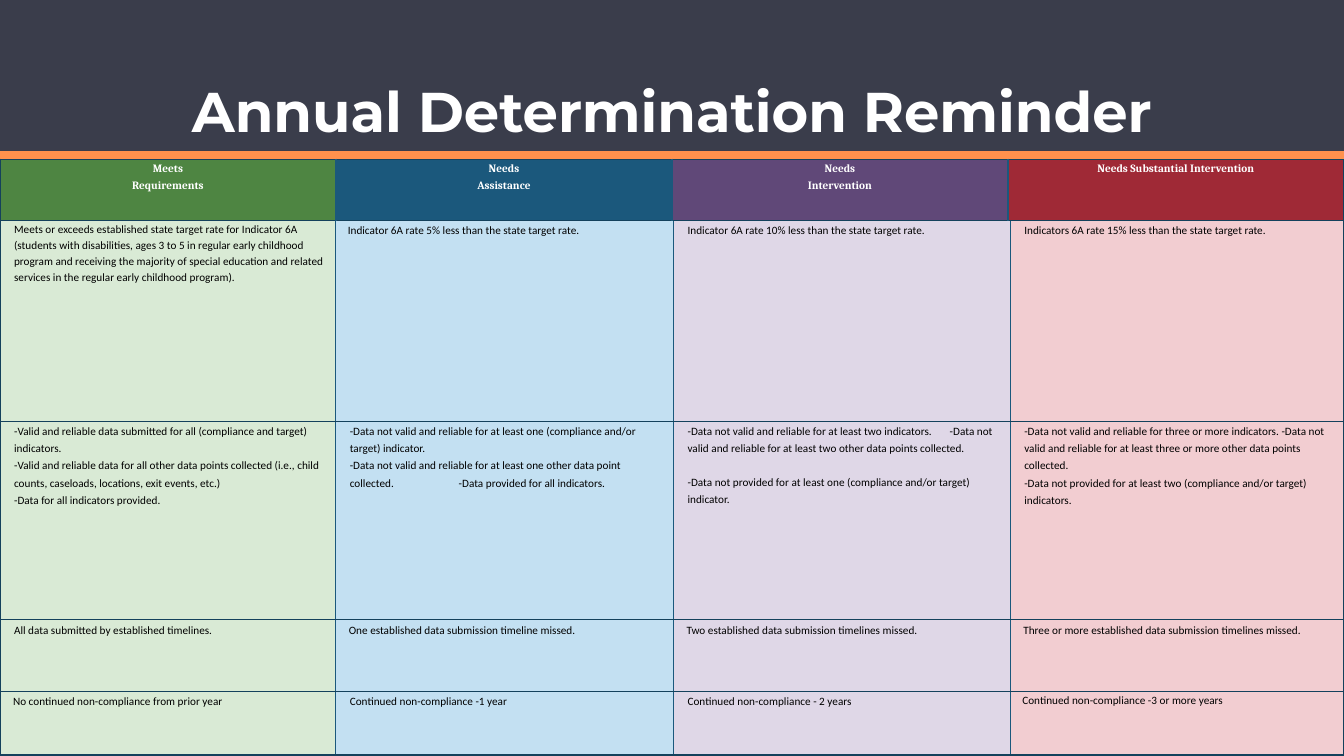
import pptx
import pptx.dml.color
import pptx.enum.shapes
import pptx.enum.text
import pptx.oxml.ns
import pptx.util
from lxml import etree

Inches = pptx.util.Inches
Pt = pptx.util.Pt
ALIGN = pptx.enum.text.PP_ALIGN
ANCHOR = pptx.enum.text.MSO_ANCHOR
qn = pptx.oxml.ns.qn


def color(value):
    return pptx.dml.color.RGBColor.from_string(value)


class SlideBuilder:
    title_font, header_font, body_font = "Montserrat", "Cambria", "Calibri"
    white, black = "FFFFFF", "000000"
    edge, divider = "14415C", "1B587C"

    def __init__(self, page):
        self.page = page

    def band(self, top, height, fill):
        shape = self.page.shapes.add_shape(
            pptx.enum.shapes.MSO_SHAPE.RECTANGLE,
            Inches(0), Inches(top), Inches(13.33), Inches(height))
        shape.shadow.inherit = False
        shape.fill.solid()
        shape.fill.fore_color.rgb = color(fill)
        shape.line.fill.background()

    def span(self, para, text, font, size, ink, bold=False):
        run = para.add_run()
        run.text = text
        run.font.name = font
        run.font.size = Pt(size)
        run.font.bold = bold
        run.font.color.rgb = color(ink)

    def title(self, text):
        box = self.page.shapes.add_textbox(
            Inches(0), Inches(0), Inches(13.33), Inches(1.48))
        frame = box.text_frame
        frame.word_wrap = True
        frame.vertical_anchor = ANCHOR.BOTTOM
        para = frame.paragraphs[0]
        para.alignment = ALIGN.CENTER
        para.line_spacing = 0.9
        self.span(para, text, self.title_font, 40, self.white, True)

    def border(self, cell, side, ink):
        line = etree.SubElement(cell._tc.get_or_add_tcPr(), qn("a:ln" + side), w=str(Pt(1)))
        fill = etree.SubElement(line, qn("a:solidFill"))
        etree.SubElement(fill, qn("a:srgbClr"), val=ink)

    def cell_text(self, cell, lines, header, indent, spacing, tab, gap):
        for index, text in enumerate(lines):
            frame = cell.text_frame
            para = frame.add_paragraph() if index else frame.paragraphs[0]
            properties = para._p.get_or_add_pPr()
            if tab and "\t" in text:
                stops = etree.SubElement(properties, qn("a:tabLst"))
                etree.SubElement(stops, qn("a:tab"), pos=str(Inches(tab)), algn="l")
            para.line_spacing = spacing
            if index and gap:
                para.space_before = Pt(gap)
            if header:
                para.alignment = ALIGN.CENTER
                self.span(para, text, self.header_font, 8, self.white, True)
            else:
                properties.set("marL", str(Inches(indent)))
                self.span(para, text, self.body_font, 8, self.black)

    def table(self, top, widths, heights, rows, fills, header=False):
        frame = self.page.shapes.add_table(
            len(rows), len(widths), Inches(0), Inches(top),
            Inches(13.33), Inches(sum(heights)))
        table = frame.table
        table.first_row = False
        table.horz_banding = False
        for column, width in zip(table.columns, widths):
            column.width = Inches(width)
        last = len(widths) - 1
        for row, height, contents in zip(table.rows, heights, rows):
            row.height = Inches(height)
            for index, content in enumerate(contents):
                cell = row.cells[index]
                cell.margin_left = cell.margin_right = Inches(0.05 if header else 0.07)
                cell.margin_top = cell.margin_bottom = 0
                self.border(cell, "L", self.divider if index else self.edge)
                self.border(cell, "R", self.edge if index == last else self.divider)
                self.border(cell, "T", self.edge)
                self.border(cell, "B", self.edge)
                cell.fill.solid()
                cell.fill.fore_color.rgb = color(fills[index])
                self.cell_text(cell, content["lines"], header,
                               content.get("indent", 0.07),
                               content.get("spacing", 1.28 if header else 1.25),
                               content.get("tab"), content.get("gap"))


def entry(*lines, **style):
    return dict(lines=lines, **style)


HEADERS = [[
    entry("Meets", "Requirements"),
    entry("Needs", "Assistance"),
    entry("Needs", "Intervention"),
    entry("Needs Substantial Intervention"),
]]

CRITERIA = [
    [
        entry("Meets or exceeds established state target rate for Indicator 6A "
              "(students with disabilities, ages 3 to 5 in regular early childhood "
              "program and receiving the majority of special education and related "
              "services in the regular early childhood program).", spacing=1.15),
        entry("Indicator 6A rate 5% less than the state target rate.", indent=0.05),
        entry("Indicator 6A rate 10% less than the state target rate."),
        entry("Indicators 6A rate 15% less than the state target rate."),
    ],
    [
        entry("-Valid and reliable data submitted for all (compliance and target) indicators.",
              "-Valid and reliable data for all other data points collected "
              "(i.e., child counts, caseloads, locations, exit events, etc.)",
              "-Data for all indicators provided."),
        entry("-Data not valid and reliable for at least one (compliance and/or target) indicator.",
              "-Data not valid and reliable for at least one other data point collected."
              "\t-Data provided for all indicators.", tab=1.08),
        entry("-Data not valid and reliable for at least two indicators.\t-Data not "
              "valid and reliable for at least two other data points collected.",
              "-Data not provided for at least one (compliance and/or target) indicator.",
              tab=2.6, gap=12),
        entry("-Data not valid and reliable for three or more indicators. -Data not "
              "valid and reliable for at least three or more other data points collected.",
              "-Data not provided for at least two (compliance and/or target) indicators."),
    ],
    [
        entry("All data submitted by established timelines.", spacing=1.27),
        entry("One established data submission timeline missed.", indent=0.06),
        entry("Two established data submission timelines missed.", indent=0.06),
        entry("Three or more established data submission timelines missed.", indent=0.06),
    ],
    [
        entry("No continued non-compliance from prior year", indent=0.06),
        entry("Continued non-compliance -1 year"),
        entry("Continued non-compliance - 2 years"),
        entry("Continued non-compliance -3 or more years", indent=0.05, spacing=1.15),
    ],
]


def main():
    deck = pptx.Presentation()
    deck.slide_width = Inches(13.33)
    deck.slide_height = Inches(7.5)
    builder = SlideBuilder(deck.slides.add_slide(deck.slide_layouts[6]))
    builder.band(0, 1.5, "3A3D4B")
    builder.band(1.5, 0.09, "FF914D")
    builder.title("Annual Determination Reminder")
    builder.table(2.19, [3.33, 3.35, 3.34, 3.31], [1.99, 1.97, 0.71, 0.63], CRITERIA,
                  ["D9EAD5", "C3E0F2", "DFD7E7", "F2CDD1"])
    builder.table(1.58, [13.33 / 4] * 4, [0.61], HEADERS,
                  ["4E8542", "1B587C", "604878", "9F2936"], header=True)
    deck.save("out.pptx")


if __name__ == "__main__":
    main()
